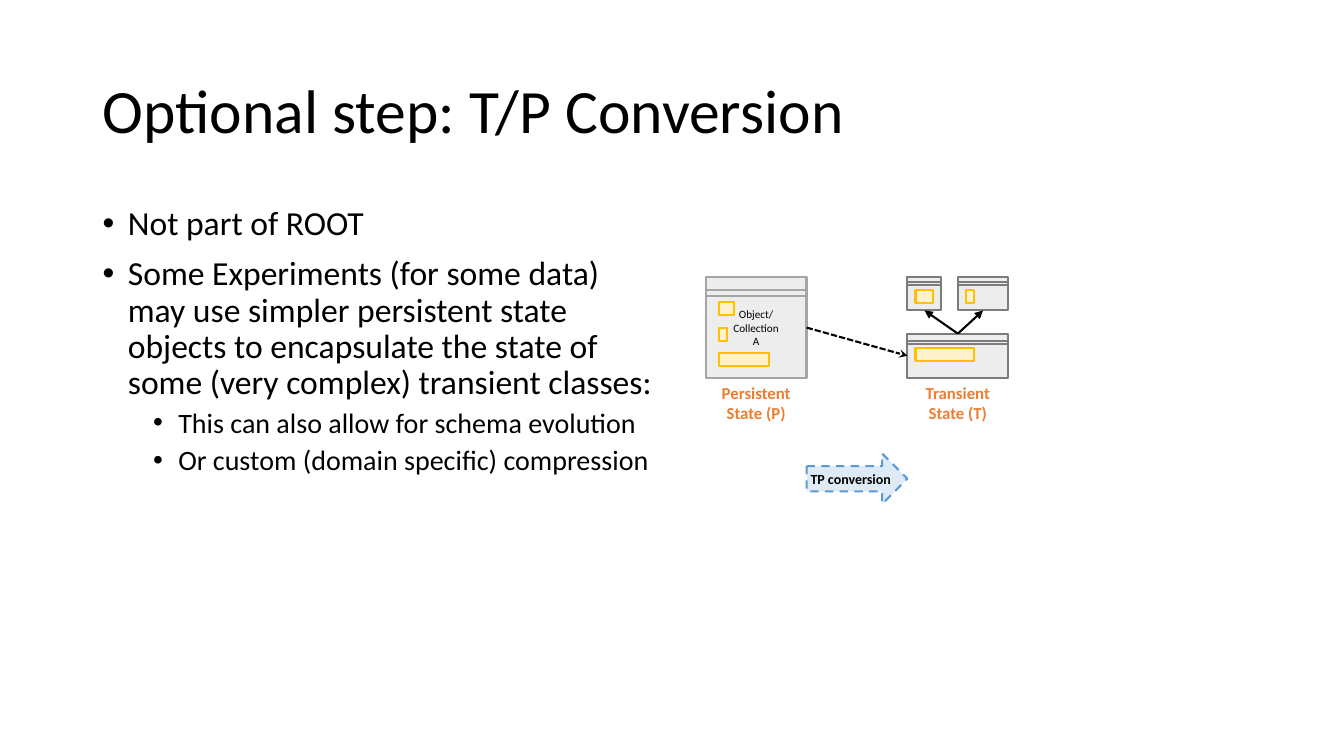
from lxml import etree
from pptx import Presentation
from pptx.dml.color import RGBColor
from pptx.enum.dml import MSO_LINE
from pptx.enum.shapes import MSO_CONNECTOR, MSO_SHAPE
from pptx.enum.text import MSO_ANCHOR, PP_ALIGN
from pptx.oxml.ns import qn
from pptx.util import Inches, Pt

RECTANGLE, RIGHT_ARROW = MSO_SHAPE.RECTANGLE, MSO_SHAPE.RIGHT_ARROW
STRAIGHT = MSO_CONNECTOR.STRAIGHT
DASH, SHORT_DASH = MSO_LINE.DASH, MSO_LINE.SQUARE_DOT
MIDDLE, TOP = MSO_ANCHOR.MIDDLE, MSO_ANCHOR.TOP
CENTER, LEFT = PP_ALIGN.CENTER, PP_ALIGN.LEFT

BLACK = RGBColor(0x00, 0x00, 0x00)
PANEL = RGBColor(0xED, 0xED, 0xED)
GRAY = RGBColor(0xA5, 0xA5, 0xA5)
DARK_GRAY = RGBColor(0x7C, 0x7C, 0x7C)
CREAM = RGBColor(0xFF, 0xF2, 0xCC)
GOLD = RGBColor(0xFF, 0xC0, 0x00)
ORANGE = RGBColor(0xED, 0x7D, 0x31)
PALE_BLUE = RGBColor(0xDE, 0xEB, 0xF7)
BLUE = RGBColor(0x5B, 0x9B, 0xD5)

COLUMN = ROW = Inches(1)
FONT = "Calibri"
LINE_WIDTH = Pt(1.5)


def apply(target, values):
    for name, value in values.items():
        setattr(target, name, value)


def place(*lengths):
    return [round(length * unit) for length, unit in zip(lengths, (COLUMN, ROW) * 2)]


class Canvas:
    def __init__(self, page):
        self.page = page
        self.shapes = page.shapes

    def start_group(self):
        self.shapes = self.page.shapes.add_group_shape().shapes

    def end_group(self):
        self.shapes = self.page.shapes

    def paragraph(self, frame, index, line, size, color=BLACK, bold=False, **para_format):
        para = frame.add_paragraph() if index else frame.paragraphs[0]
        apply(para, para_format)
        span = para.add_run()
        span.text = line
        apply(span.font, {"name": FONT, "size": Pt(size), "bold": bold})
        span.font.color.rgb = color
        return para

    def label(self, box, lines, size, anchor=TOP, **style):
        apply(box.text_frame, {"word_wrap": True, "vertical_anchor": anchor})
        for index, line in enumerate(lines):
            self.paragraph(box.text_frame, index, line, size, **style)

    def text(self, area, lines, size, **style):
        box = self.shapes.add_textbox(*place(*area))
        self.label(box, lines, size, **style)

    def bullets(self, area, items):
        levels = [(24, 0.25, 10), (20, 0.75, 5)]
        frame = self.shapes.add_textbox(*place(*area)).text_frame
        frame.word_wrap = True
        for index, (level, line) in enumerate(items):
            size, indent, before = levels[level]
            para = self.paragraph(frame, index, line, size, level=level,
                                  line_spacing=0.9, space_before=Pt(before))
            properties = para._p.get_or_add_pPr()
            properties.set("marL", str(Inches(indent)))
            properties.set("indent", str(Inches(-0.25)))
            etree.SubElement(properties, qn("a:buFont")).set("typeface", "Arial")
            etree.SubElement(properties, qn("a:buChar")).set("char", "•")

    def shape(self, area, fill, line, kind=RECTANGLE, dash=None):
        shape = self.shapes.add_shape(kind, *place(*area))
        shape.shadow.inherit = False
        shape.fill.solid()
        shape.fill.fore_color.rgb = fill
        shape.line.color.rgb = line
        apply(shape.line, {"width": LINE_WIDTH, "dash_style": dash})
        return shape

    def line(self, start, end, color=BLACK, dash=None, arrow=None):
        line = self.shapes.add_connector(STRAIGHT, *place(*start, *end))
        line.line.color.rgb = color
        apply(line.line, {"width": LINE_WIDTH, "dash_style": dash})
        properties = line._element.spPr
        if arrow:
            outline = properties.find(qn("a:ln"))
            etree.SubElement(outline, qn("a:tailEnd")).set("type", arrow)
        etree.SubElement(properties, qn("a:effectLst"))

    def record(self, area, color, rules):
        left, top, width, height = area
        box = self.shape(area, PANEL, color)
        for offset in rules:
            self.line((left, top + offset), (left + width, top + offset), color)
        return box

    def field(self, left, top, width):
        self.shape((left, top, width, 0.13), CREAM, GOLD)


def draw_persistent_state(canvas):
    canvas.start_group()
    box = canvas.record((7, 2.75, 1, 1), GRAY, (0.13, 0.19))
    canvas.label(box, ["Object/", "Collection", "A"], 8, alignment=CENTER, anchor=MIDDLE)
    for index, width in enumerate((0.15, 0.08, 0.5)):
        canvas.field(7.13, 3 + index / 4, width)
    canvas.end_group()


def draw_transient_state(canvas):
    canvas.start_group()
    canvas.record((9, 2.75, 0.33, 0.33), DARK_GRAY, (0.05, 0.08))
    canvas.record((9.5, 2.75, 0.5, 0.33), DARK_GRAY, (0.05, 0.08))
    canvas.record((9, 3.31, 1, 0.44), DARK_GRAY, (0.07, 0.1))
    for left, top, width in ((9.08, 2.88, 0.17), (9.58, 2.88, 0.08), (9.08, 3.45, 0.58)):
        canvas.field(left, top, width)
    for target in (9.17, 9.75):
        canvas.line((9.5, 3.31), (target, 3.08), arrow="triangle")
    canvas.end_group()


def main():
    deck = Presentation()
    apply(deck, {"slide_width": Inches(13.33), "slide_height": Inches(7.5)})
    canvas = Canvas(deck.slides.add_slide(deck.slide_layouts[6]))

    canvas.text((0.92, 0.4, 11.5, 1.45), ["Optional step: T/P Conversion"], 44,
                anchor=MIDDLE, alignment=LEFT, line_spacing=0.9)
    canvas.bullets((0.92, 2, 5.67, 4.76), [
        (0, "Not part of ROOT"),
        (0, "Some Experiments (for some data) may use simpler persistent state objects "
            "to encapsulate the state of some (very complex) transient classes:"),
        (1, "This can also allow for schema evolution"),
        (1, "Or custom (domain specific) compression"),
    ])

    draw_persistent_state(canvas)
    draw_transient_state(canvas)
    for left, caption in ((7, "Persistent State (P)"), (9, "Transient State (T)")):
        canvas.text((left, 3.75, 1, 0.5), [caption], 12, color=ORANGE, bold=True,
                    alignment=CENTER)
    canvas.line((8, 3.25), (9, 3.53), dash=SHORT_DASH, arrow="stealth")

    arrow = canvas.shape((8, 4.5, 1, 0.5), PALE_BLUE, BLUE, RIGHT_ARROW, DASH)
    apply(arrow.text_frame, {"margin_left": 0, "margin_right": 0})
    canvas.label(arrow, ["TP conversion"], 10, bold=True, alignment=CENTER, anchor=MIDDLE)

    deck.save("out.pptx")


if __name__ == "__main__":
    main()
